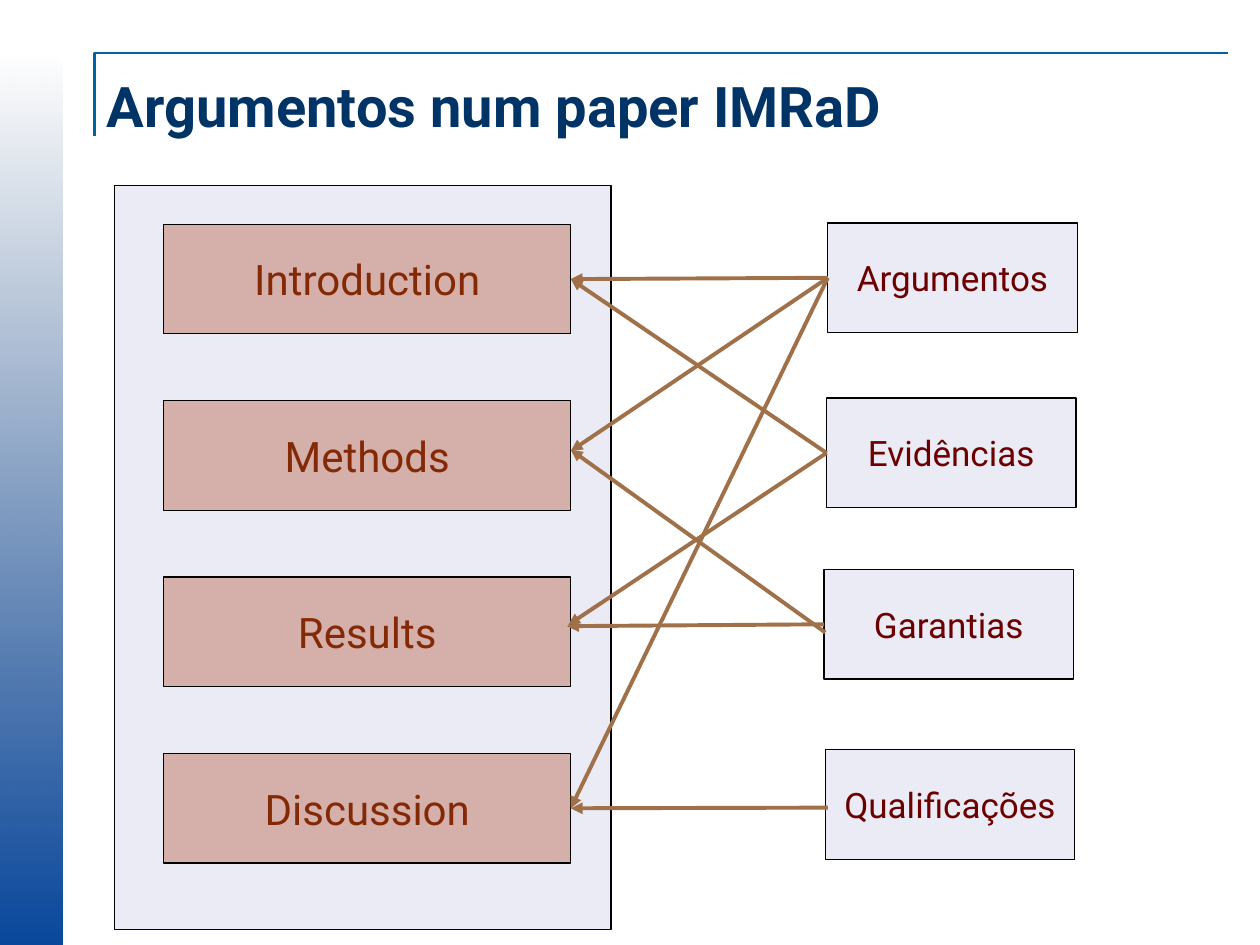
from lxml import etree
from pptx import Presentation
from pptx.dml.color import RGBColor
from pptx.enum.shapes import MSO_CONNECTOR, MSO_SHAPE
from pptx.enum.text import MSO_ANCHOR, PP_ALIGN
from pptx.oxml.ns import qn
from pptx.util import Inches, Pt

RECT = MSO_SHAPE.RECTANGLE
STRAIGHT = MSO_CONNECTOR.STRAIGHT
MIDDLE = MSO_ANCHOR.MIDDLE
LEFT, CENTER = PP_ALIGN.LEFT, PP_ALIGN.CENTER
LEFT_SIDE, RIGHT_SIDE = 1, 3

COLS, ROWS = 100, 75
FONT = "Roboto"
COLORS = {
    "bar_start": "08479C", "bar_end": "063370", "rule": "006699",
    "title": "003366", "panel": "EBEBF5", "section": "D5B0AA",
    "section_text": "832905", "element_text": "6C0000",
    "border": "000000", "arrow": "A07149",
}


def rgb(name):
    return RGBColor.from_string(COLORS[name])


def write(sp, text, size, color, bold=False, align=CENTER, wrap=False):
    tf = sp.text_frame
    tf.word_wrap = wrap
    tf.vertical_anchor = MIDDLE
    p = tf.paragraphs[0]
    p.alignment = align
    r = p.add_run()
    r.text = text
    r.font.name = FONT
    r.font.size = Pt(size)
    r.font.bold = bold
    r.font.color.rgb = rgb(color)


class Deck:
    def __init__(self):
        self.prs = Presentation()
        self.prs.slide_width = Inches(10)
        self.prs.slide_height = Inches(7.5)
        self.s = self.prs.slides.add_slide(self.prs.slide_layouts[6])

    def point(self, col, row):
        return (round(self.prs.slide_width * col / COLS),
                round(self.prs.slide_height * row / ROWS))

    def area(self, col, row, width, height):
        return self.point(col, row) + self.point(width, height)

    def box(self, area, fill, text=None, size=None, color=None):
        sp = self.s.shapes.add_shape(RECT, *self.area(*area))
        sp.shadow.inherit = False
        sp.fill.solid()
        sp.fill.fore_color.rgb = rgb(fill)
        sp.line.color.rgb = rgb("border")
        sp.line.width = Pt(0.75)
        if text:
            write(sp, text, size, color)
        return sp

    def side_bar(self, area):
        sp = self.s.shapes.add_shape(RECT, *self.area(*area))
        sp.shadow.inherit = False
        sp.rotation = 270
        sp.line.fill.background()
        sp.fill.gradient()
        sp.fill.gradient_angle = 0
        for stop, position, color in zip(sp.fill.gradient_stops, (0, 1), ("bar_start", "bar_end")):
            stop.position = position
            stop.color.rgb = rgb(color)
        last = sp._element.spPr.findall(".//" + qn("a:srgbClr"))[-1]
        etree.SubElement(last, qn("a:alpha"), val="0")

    def rule(self, points):
        start, *rest = [self.point(*pt) for pt in points]
        builder = self.s.shapes.build_freeform(*start)
        builder.add_line_segments(rest, close=False)
        sp = builder.convert_to_shape()
        sp.shadow.inherit = False
        sp.fill.background()
        sp.line.color.rgb = rgb("rule")
        sp.line.width = Pt(1.5)

    def title(self, area, text):
        sp = self.s.shapes.add_textbox(*self.area(*area))
        write(sp, text, 32, "title", bold=True, align=LEFT, wrap=True)

    def arrow(self, source, target, start=None, end=None):
        begin = self.point(*start) if start else (0, 0)
        finish = self.point(*end) if end else (0, 0)
        cn = self.s.shapes.add_connector(STRAIGHT, *begin, *finish)
        if not start:
            cn.begin_connect(source, LEFT_SIDE)
        if not end:
            cn.end_connect(target, RIGHT_SIDE)
        cn.line.color.rgb = rgb("arrow")
        cn.line.width = Pt(2.25)
        etree.SubElement(cn.line._get_or_add_ln(), qn("a:tailEnd"), type="triangle")
        etree.SubElement(cn._element.spPr, qn("a:effectLst"))


def main():
    deck = Deck()
    deck.side_bar((-32.9, 37.1, 70.8, 5))
    deck.rule([(7.5, 10.8), (7.5, 4.2), (97.5, 4.2)])
    deck.title((7.5, 4.2, 89.2, 8.3), "Argumentos num paper IMRaD")
    deck.box((9.1, 14.7, 39.4, 59.1), "panel")

    sections = {}
    for i, name in enumerate(("Introduction", "Methods", "Results", "Discussion")):
        area = (13, 17.8 + 14 * i, 32.3, 8.7)
        sections[name] = deck.box(area, "section", name, 24, "section_text")

    elements = [
        ("Argumentos", 65.7, 17.7, [
            ("Introduction", None, None),
            ("Methods", None, (45.3, 35.8)),
            ("Discussion", None, None)]),
        ("Evidências", 65.6, 31.6, [
            ("Results", None, (45.1, 49.6)),
            ("Introduction", None, None)]),
        ("Garantias", 65.4, 45.2, [
            ("Results", None, (45, 49.7)),
            ("Methods", (65.5, 50.2), (45.3, 35.7))]),
        ("Qualificações", 65.5, 59.5, [
            ("Discussion", (65.7, 64.1), None)]),
    ]
    for name, col, row, links in elements:
        sp = deck.box((col, row, 19.8, 8.7), "panel", name, 20, "element_text")
        for target, start, end in links:
            deck.arrow(sp, sections[target], start, end)

    deck.prs.save("out.pptx")


if __name__ == "__main__":
    main()
